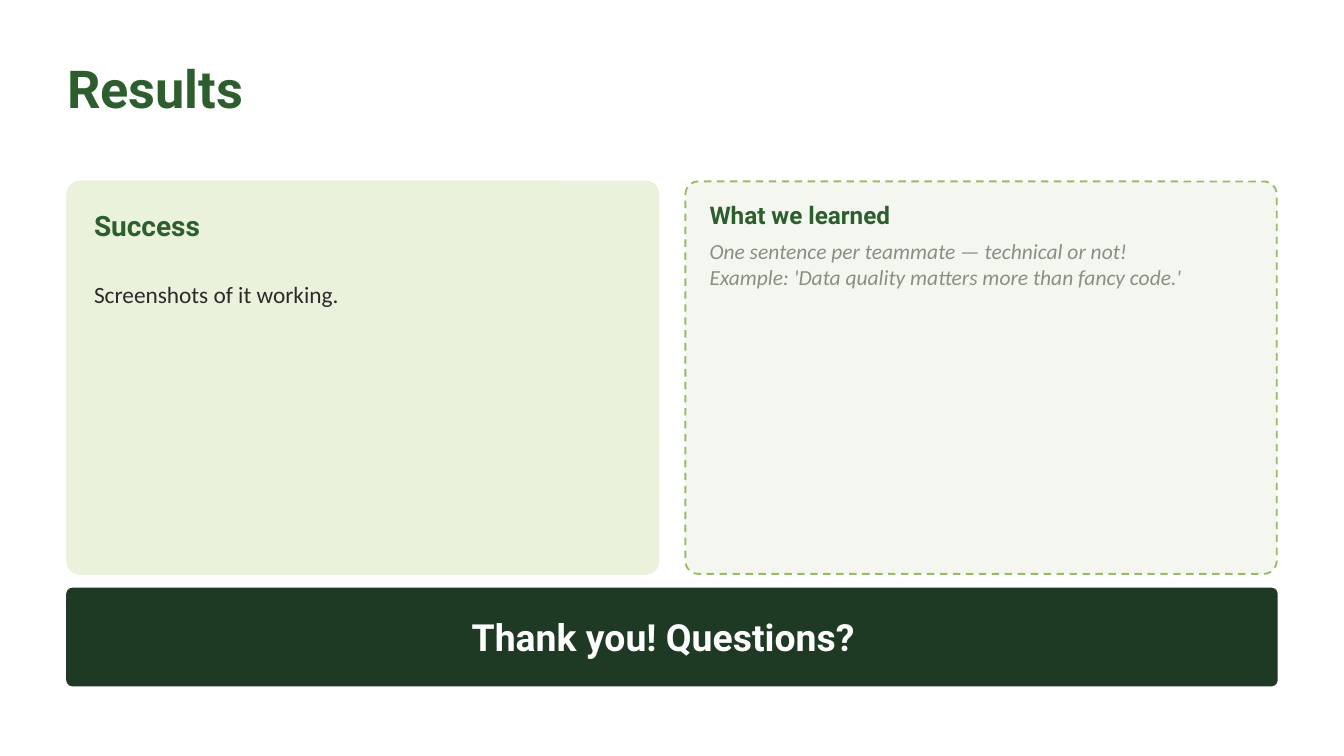
from pptx import Presentation
from pptx import util as u
from pptx.dml.color import RGBColor
from pptx.enum import dml, shapes, text

PX = 4572  # 200 px to the inch
GREEN, DARK, LIME = "2C5F2D", "1E3A24", "97BC62"
HEAD = dict(name="Roboto", bold=True)
BODY = dict(name="Calibri", bold=False)


def rgb(value):
    return RGBColor.from_string(value)


def emu(*lengths):
    return [u.Emu(n * PX) for n in lengths]


def write(sp, lines, color, size, spacing=None, anchor=text.MSO_ANCHOR.TOP, **font):
    """Fill a text shape, one paragraph per line, without insets."""
    tf = sp.text_frame
    frame = dict(word_wrap=True, auto_size=text.MSO_AUTO_SIZE.NONE, vertical_anchor=anchor,
                 margin_left=0, margin_right=0, margin_top=0, margin_bottom=0)
    for key, value in frame.items():
        setattr(tf, key, value)
    for i, line in enumerate(lines):
        p = tf.add_paragraph() if i else tf.paragraphs[0]
        p.alignment = text.PP_ALIGN.LEFT
        p.line_spacing = spacing
        r = p.add_run()
        r.text = line
        for key, value in dict(font, size=u.Pt(size)).items():
            setattr(r.font, key, value)
        r.font.color.rgb = rgb(color)


def add_text(s, box, lines, color, size, **fmt):
    write(s.shapes.add_textbox(*emu(*box)), lines, color, size, **fmt)


def add_panel(s, box, fill, line, radius, dash=None):
    sp = s.shapes.add_shape(shapes.MSO_SHAPE.ROUNDED_RECTANGLE, *emu(*box))
    sp.shadow.inherit = False
    sp.adjustments[0] = radius
    sp.fill.solid()
    sp.fill.fore_color.rgb = rgb(fill)
    sp.line.color.rgb = rgb(line)
    sp.line.width = u.Pt(1)
    if dash:
        sp.line.dash_style = dash


def add_title(s, box, title):
    sp = s.shapes.title
    sp.left, sp.top, sp.width, sp.height = emu(*box)
    write(sp, [title], GREEN, 28, **HEAD)


def add_success(s, box):
    x, y, w, h = box
    add_panel(s, box, "EAF2DC", "EAF2DC", 0.033)
    add_text(s, (x + 40, y + 32, w - 80, 68), ["Success"], GREEN, 15,
             anchor=text.MSO_ANCHOR.MIDDLE, **HEAD)
    add_text(s, (x + 40, y + 145, w - 80, 247), ["Screenshots of it working."],
             "2B2B2B", 12.5, spacing=1.05, **BODY)


def add_lessons(s, box):
    x, y, w, h = box
    add_panel(s, box, "F4F7EF", LIME, 0.033, dml.MSO_LINE.DASH)
    add_text(s, (x + 36, y + 20, w - 72, 60), ["What we learned"], GREEN, 13,
             anchor=text.MSO_ANCHOR.MIDDLE, **HEAD)
    add_text(s, (x + 36, y + 84, w - 72, 310),
             ["One sentence per teammate — technical or not!",
              "Example: 'Data quality matters more than fancy code.'"],
             "8A8F86", 11.5, italic=True, **BODY)


def add_closing(s, box):
    x, y, w, h = box
    add_panel(s, box, DARK, DARK, 0.055)
    add_text(s, (x + 602, y + 22, 800, h - 44), ["Thank you! Questions?"], "FFFFFF", 20,
             anchor=text.MSO_ANCHOR.MIDDLE, **HEAD)


def main():
    prs = Presentation()
    prs.slide_width, prs.slide_height = emu(2000, 1125)
    s = prs.slides.add_slide(prs.slide_layouts[5])
    left, width, gap = 100, 1800, 40
    column = (width - gap) // 2
    add_title(s, (left, 84, width, 190), "Results")
    add_success(s, (left, 270, column, 584))
    add_lessons(s, (left + column + gap, 270, column, 584))
    add_closing(s, (left, 876, width, 144))
    prs.save("out.pptx")


if __name__ == "__main__":
    main()
